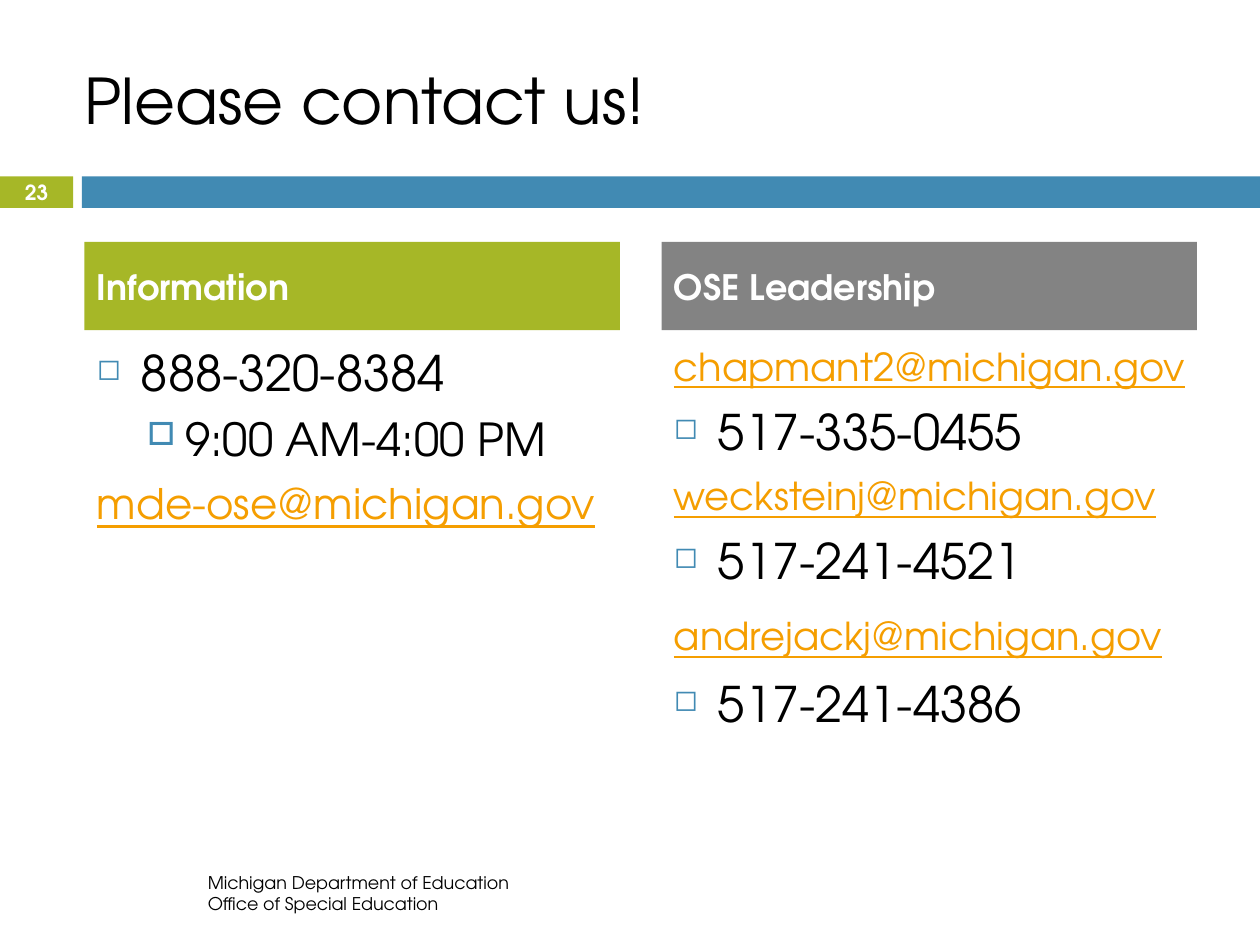
from pptx import Presentation
from pptx.dml.color import RGBColor
from pptx.enum.shapes import MSO_SHAPE
from pptx.enum.text import MSO_ANCHOR as Anchor, PP_ALIGN as Align
from pptx.util import Inches, Pt
from lxml import etree

FONT = "TeX Gyre Adventor"
BLUE, GREEN, GRAY, ORANGE = "418AB3", "A6B727", "838383", "F59E00"
BLACK, WHITE = "000000", "FFFFFF"
NAMESPACE = "{http://schemas.openxmlformats.org/drawingml/2006/main}"

# Paragraph styles: size, colour, underline, bullet (character, percent, indent, hanging)
PHONE = (28, BLACK, False, ("◻", 60, 0.35, 0.35))
HOURS = (26, BLACK, False, ("□", 70, 0.7, 0.3))
MAIN_EMAIL = (24, ORANGE, True, None)
EMAIL = (22, ORANGE, True, None)

presentation = Presentation()
presentation.slide_width, presentation.slide_height = Inches(10), Inches(7.5)
slide = presentation.slides.add_slide(presentation.slide_layouts[6])


def color(hex_string):
    return RGBColor.from_string(hex_string)


def add_box(left, top, width, height, fill=None, lines=(), size=20,
            text_color=BLACK, bold=False, align=Align.LEFT, margin=None):
    """Add a filled rectangle or a text box with uniformly styled lines."""
    place = [Inches(value) for value in (left, top, width, height)]
    if fill:
        shape = slide.shapes.add_shape(MSO_SHAPE.RECTANGLE, *place)
        shape.shadow.inherit = False
        shape.fill.solid()
        shape.fill.fore_color.rgb = color(fill)
        shape.line.fill.background()
    else:
        shape = slide.shapes.add_textbox(*place)
    frame = shape.text_frame
    frame.word_wrap = True
    frame.vertical_anchor = Anchor.MIDDLE
    if margin is not None:
        frame.margin_left = frame.margin_right = Inches(margin)
        frame.margin_top = frame.margin_bottom = Inches(margin)
    for index, line in enumerate(lines):
        paragraph = frame.add_paragraph() if index else frame.paragraphs[0]
        paragraph.text = line
        paragraph.alignment = align
        font = paragraph.font
        font.name, font.size, font.bold = FONT, Pt(size), bold
        font.color.rgb = color(text_color)
    return shape


# Title, divider bar and slide number
add_box(0.65, 1.4, 9.35, 0.25, BLUE)
add_box(0, 1.4, 0.58, 0.25, GREEN, ["23"], 11.9, WHITE, True, Align.CENTER, 0)
add_box(0.67, 0.25, 8.92, 1.08, lines=["Please contact us!"], size=36, margin=0)

# Two columns: heading, then lines of (text, style, space before)
columns = [
    (0.67, 4.25, GREEN, "Information", [
        ("888-320-8384", PHONE, 0),
        ("9:00 AM-4:00 PM", HOURS, 5.5),
        ("mde-ose@michigan.gov", MAIN_EMAIL, 7),
    ]),
    (5.25, 4.33, GRAY, "OSE Leadership", [
        ("chapmant2@michigan.gov", EMAIL, 0),
        ("517-335-0455", PHONE, 7),
        ("wecksteinj@michigan.gov", EMAIL, 7),
        ("517-241-4521", PHONE, 7),
        ("andrejackj@michigan.gov", EMAIL, 13),
        ("517-241-4386", PHONE, 8.5),
    ]),
]
for left, width, fill, heading, contacts in columns:
    add_box(left, 1.92, 4.25, 0.7, fill, [heading], 20, WHITE, True)
    frame = add_box(left, 2.67, width, 3.92).text_frame
    frame.vertical_anchor = Anchor.TOP
    for index, (text, style, space) in enumerate(contacts):
        size, text_color, underline, bullet = style
        paragraph = frame.add_paragraph() if index else frame.paragraphs[0]
        paragraph.text = text
        paragraph.space_before = Pt(space)
        if bullet:
            character, percent, indent, hanging = bullet
            paragraph.level = 1 if style is HOURS else 0
            properties = paragraph._p.get_or_add_pPr()
            properties.set("marL", str(Inches(indent)))
            properties.set("indent", str(-Inches(hanging)))
            bullet_color = etree.SubElement(properties, NAMESPACE + "buClr")
            etree.SubElement(bullet_color, NAMESPACE + "srgbClr", val=BLUE)
            etree.SubElement(properties, NAMESPACE + "buSzPct", val=str(percent * 1000))
            etree.SubElement(properties, NAMESPACE + "buChar", char=character)
        font = paragraph.font
        font.name, font.size, font.underline = FONT, Pt(size), underline
        font.color.rgb = color(text_color)

# Footer
add_box(1.65, 6.92, 2.43, 0.33, size=10, margin=0,
        lines=["Michigan Department of Education", "Office of Special Education"])

presentation.save("out.pptx")
